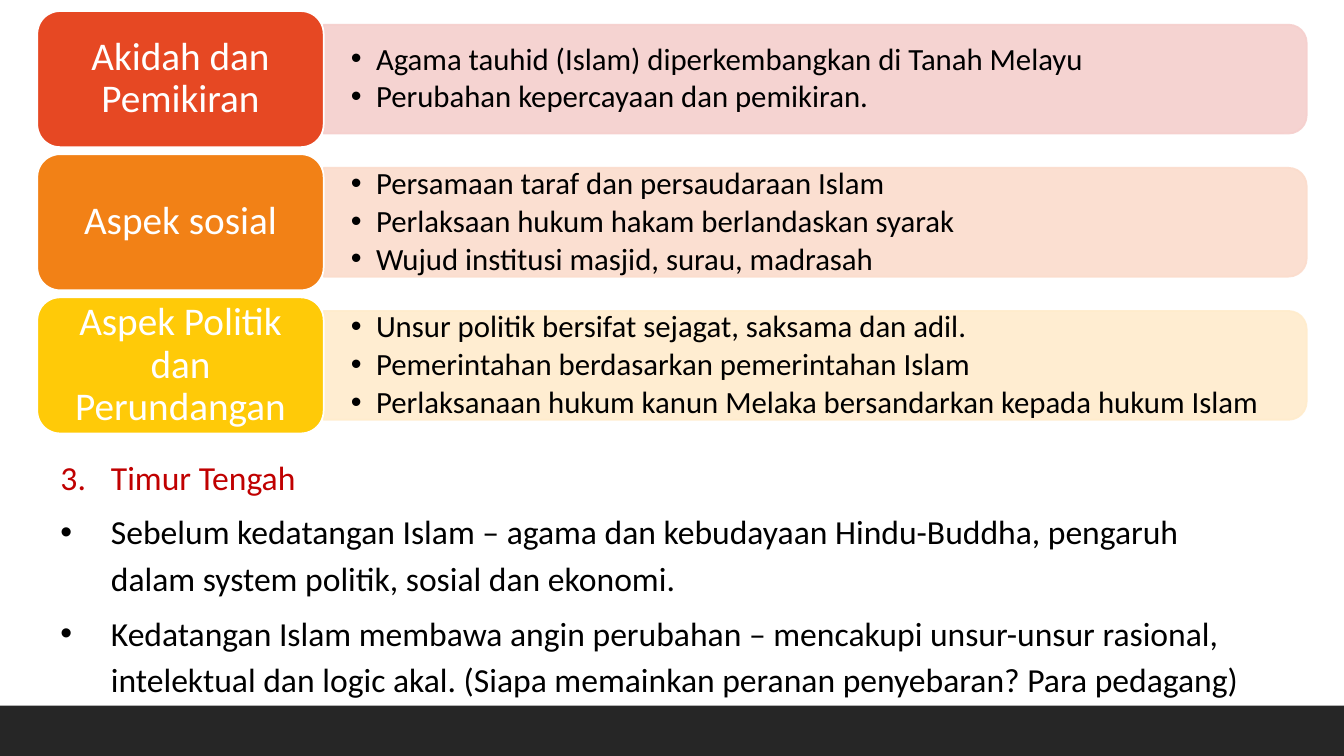
from pptx import Presentation
from pptx.dml.color import RGBColor as RGB
from pptx.enum.shapes import MSO_SHAPE as SHAPE
from pptx.enum.text import MSO_ANCHOR as ANCHOR, MSO_AUTO_SIZE as FIT, PP_ALIGN as ALIGN
from pptx.oxml.ns import qn
from pptx.util import Inches, Pt
from lxml import etree

COLORS = {
    "white": "FFFFFF", "black": "000000", "heading": "C00000", "footer": "262626",
    "red": "E64823", "pale_red": "F5CFCD",
    "orange": "F28116", "pale_orange": "FBDCCC",
    "yellow": "FFCA08", "pale_yellow": "FFECCC",
}
ASPECTS = [
    ("Akidah dan Pemikiran", "red", [
        "Agama tauhid (Islam) diperkembangkan di Tanah Melayu",
        "Perubahan kepercayaan dan pemikiran."]),
    ("Aspek sosial", "orange", [
        "Persamaan taraf dan persaudaraan Islam",
        "Perlaksaan hukum hakam berlandaskan syarak",
        "Wujud institusi masjid, surau, madrasah"]),
    ("Aspek Politik dan Perundangan", "yellow", [
        "Unsur politik bersifat sejagat, saksama dan adil.",
        "Pemerintahan berdasarkan pemerintahan Islam",
        "Perlaksanaan hukum kanun Melaka bersandarkan kepada hukum Islam"]),
]
HEADING = "Timur Tengah"
POINTS = [
    "Sebelum kedatangan Islam – agama dan kebudayaan Hindu-Buddha, pengaruh "
    "dalam system politik, sosial dan ekonomi.",
    "Kedatangan Islam membawa angin perubahan – mencakupi unsur-unsur rasional, "
    "intelektual dan logic akal. (Siapa memainkan peranan penyebaran? Para pedagang)",
]
LABEL_FORMAT = {"alignment": ALIGN.CENTER, "line_spacing": 0.9}
BULLET_FORMAT = {"alignment": ALIGN.LEFT, "line_spacing": 0.9, "space_after": Pt(3.3)}
BODY_FORMAT = {"alignment": ALIGN.LEFT, "line_spacing": 1.15,
               "space_before": Pt(0), "space_after": Pt(6)}


def set_all(target, values):
    for name, value in values.items():
        setattr(target, name, value)


def set_frame(tf, x_inset, y_inset):
    x, y = Inches(x_inset), Inches(y_inset)
    set_all(tf, {"word_wrap": True, "vertical_anchor": ANCHOR.MIDDLE,
                 "margin_left": x, "margin_right": x,
                 "margin_top": y, "margin_bottom": y})


def write(p, text, size, color, layout):
    r = p.add_run()
    r.text = text
    set_all(r.font, {"name": "Calibri", "size": Pt(size)})
    r.font.color.rgb = RGB.from_string(COLORS[color])
    set_all(p, layout)


def add_bullet(p, indent, start=None):
    pPr = p._p.get_or_add_pPr()
    pPr.set("marL", str(Inches(indent)))
    pPr.set("indent", str(-Inches(indent)))
    if start:
        etree.SubElement(pPr, qn("a:buFont"), typeface="+mj-lt")
        etree.SubElement(pPr, qn("a:buAutoNum"), type="arabicPeriod", startAt=str(start))
    else:
        etree.SubElement(pPr, qn("a:buFont"), typeface="Arial")
        etree.SubElement(pPr, qn("a:buChar"), char="•")


def paragraphs(tf, count):
    return [tf.paragraphs[0]] + [tf.add_paragraph() for _ in range(count - 1)]


def add_block(s, kind, box, fill, line=None, alpha=None):
    sp = s.shapes.add_shape(kind, *map(Inches, box))
    sp.shadow.inherit = False
    sp.fill.solid()
    sp.fill.fore_color.rgb = RGB.from_string(COLORS[fill])
    if line:
        sp.line.color.rgb = RGB.from_string(COLORS[line])
        sp.line.width = Pt(1.25)
    else:
        sp.line.fill.background()
    if alpha:
        for clr in sp._element.spPr.iter(qn("a:srgbClr")):
            etree.SubElement(clr, qn("a:alpha"), val=str(alpha * 1000))
    return sp


def add_aspect(s, box, label, color, items):
    left, top, width, height = box
    label_w = 2.84
    band_w, band_h = width - label_w, height * 0.8
    band_x, mid_y = left + label_w, top + height / 2
    pale = "pale_" + color
    band = add_block(s, SHAPE.ROUND_2_SAME_RECTANGLE,
                     (band_x + (band_w - band_h) / 2, mid_y - band_w / 2, band_h, band_w),
                     pale, pale, 90)
    band.rotation = 90

    text_h = 0.97
    tb = s.shapes.add_textbox(*map(Inches, (band_x, mid_y - text_h / 2, band_w - 0.05, text_h)))
    tf = tb.text_frame
    set_frame(tf, 0.27, 0.14)
    for p, item in zip(paragraphs(tf, len(items)), items):
        write(p, item, 22, "black", BULLET_FORMAT)
        add_bullet(p, 0.25)

    sp = add_block(s, SHAPE.ROUNDED_RECTANGLE, (left, top, label_w, height), color, "white")
    set_frame(sp.text_frame, 0.12, 0.06)
    write(sp.text_frame.paragraphs[0], label, 28, "white", LABEL_FORMAT)


def add_aspects(s, box):
    left, top, width, height = box
    row_h = 1.35
    step = (height - row_h) / (len(ASPECTS) - 1)
    for i, aspect in enumerate(ASPECTS):
        add_aspect(s, (left, top + i * step, width, row_h), *aspect)


def fill_body(s, box):
    body = s.placeholders[1]
    set_all(body, dict(zip(("left", "top", "width", "height"), map(Inches, box))))
    tf = body.text_frame
    tf.auto_size = FIT.SHAPE_TO_FIT_TEXT
    first, *rest = paragraphs(tf, len(POINTS) + 1)
    write(first, HEADING, 24, "heading", BODY_FORMAT)
    add_bullet(first, 0.5, start=3)
    for p, point in zip(rest, POINTS):
        write(p, point, 24, "black", BODY_FORMAT)
        add_bullet(p, 0.5)


def main():
    prs = Presentation()
    set_all(prs, {"slide_width": Inches(13.33), "slide_height": Inches(7.5)})
    s = prs.slides.add_slide(prs.slide_layouts[1])
    title = s.shapes.title._element
    title.getparent().remove(title)
    add_block(s, SHAPE.RECTANGLE, (0, 7, 13.33, 0.5), "footer")
    add_aspects(s, (0.37, 0.11, 12.59, 4.19))
    fill_body(s, (0.5, 4.42, 12, 2.56))
    prs.save("out.pptx")


if __name__ == "__main__":
    main()
